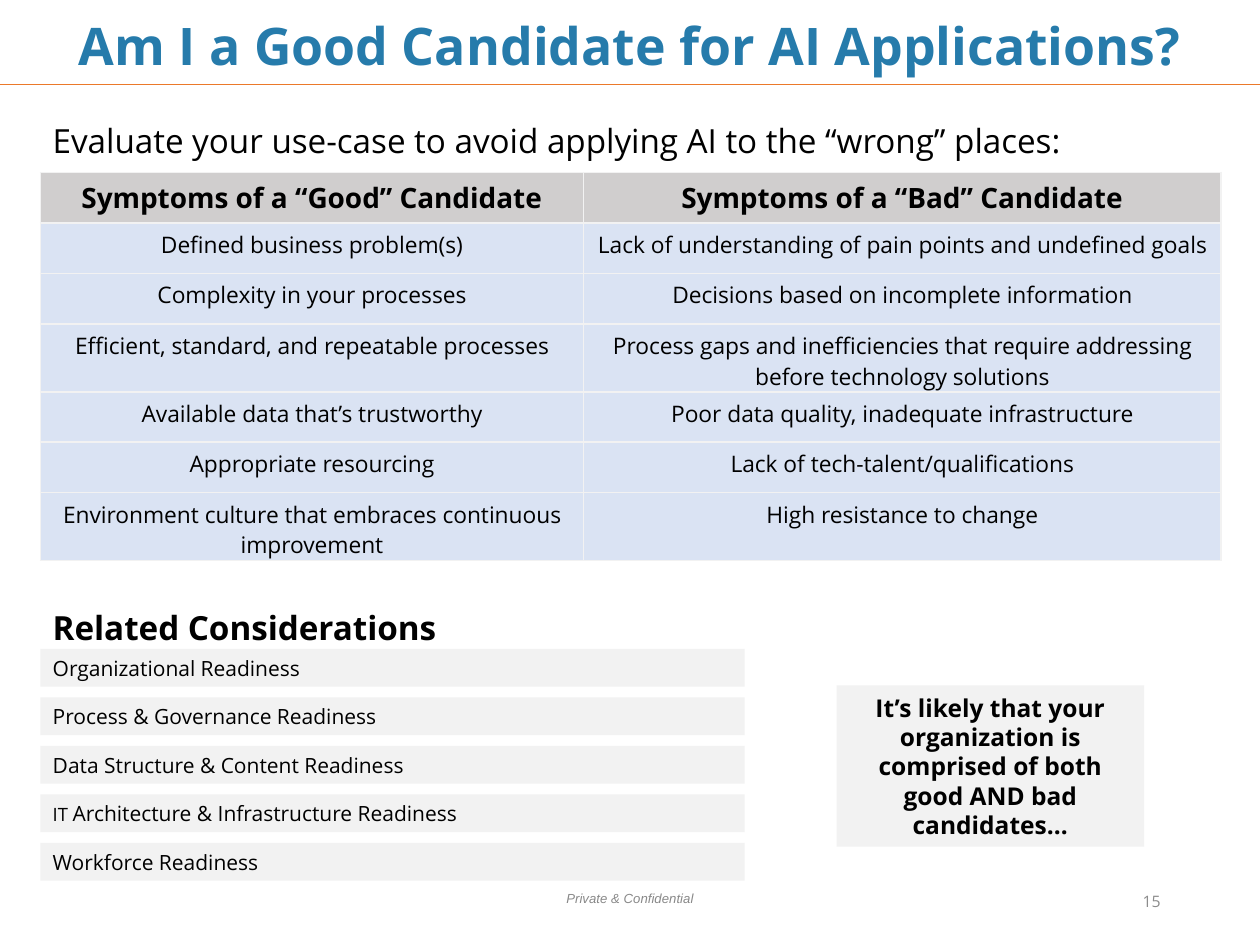
from dataclasses import dataclass

from lxml.etree import SubElement
from pptx import Presentation
from pptx.dml.color import RGBColor
from pptx.enum.shapes import MSO_CONNECTOR, MSO_SHAPE
from pptx.enum.text import MSO_ANCHOR, PP_ALIGN
from pptx.oxml.ns import qn
from pptx.util import Inches, Pt


@dataclass(frozen=True)
class Theme:
    font: str = "Open Sans"
    footer_font: str = "Arial"
    title_color: str = "267BAB"
    rule_color: str = "EB792A"
    text_color: str = "000000"
    footer_color: str = "898989"
    number_color: str = "8C8C8C"
    header_fill: str = "D0CECE"
    body_fill: str = "DAE3F3"
    panel_fill: str = "F2F2F2"
    border_color: str = "F2F2F2"
    title_size: float = 29.6
    heading_size: float = 19
    header_size: float = 16
    callout_size: float = 14
    body_size: float = 13
    item_size: float = 12
    small_item_size: float = 10.5
    number_size: float = 9
    footer_size: float = 7.5


THEME = Theme()

SYMPTOMS = [
    ("Symptoms of a “Good” Candidate", "Symptoms of a “Bad” Candidate"),
    ("Defined business problem(s)", "Lack of understanding of pain points and undefined goals"),
    ("Complexity in your processes", "Decisions based on incomplete information"),
    ("Efficient, standard, and repeatable processes",
     "Process gaps and inefficiencies that require addressing before technology solutions"),
    ("Available data that’s trustworthy", "Poor data quality, inadequate infrastructure"),
    ("Appropriate resourcing", "Lack of tech-talent/qualifications"),
    ("Environment culture that embraces continuous improvement", "High resistance to change"),
]
WRAPPED_ROWS = (3, 6)

# Each item is a list of (text, size) runs
CONSIDERATIONS = [
    [("Organizational Readiness", THEME.item_size)],
    [("Process & Governance Readiness", THEME.item_size)],
    [("Data Structure & Content Readiness", THEME.item_size)],
    [("IT ", THEME.small_item_size),
     ("Architecture & Infrastructure Readiness", THEME.item_size)],
    [("Workforce Readiness", THEME.item_size)],
]


def style_paragraph(paragraph, size, color=THEME.text_color, bold=False, italic=False,
                    align=PP_ALIGN.LEFT, font=THEME.font):
    paragraph.alignment = align
    paragraph.font.name = font
    if size:
        paragraph.font.size = Pt(size)
    paragraph.font.bold = bold
    paragraph.font.italic = italic
    paragraph.font.color.rgb = RGBColor.from_string(color)


def prepare_frame(shape, anchor=MSO_ANCHOR.TOP, inset=0.05):
    frame = shape.text_frame
    frame.word_wrap = True
    frame.vertical_anchor = anchor
    frame.margin_left = frame.margin_right = Inches(0.1)
    frame.margin_top = frame.margin_bottom = Inches(inset)
    return frame.paragraphs[0]


def add_text(slide, box, text, size, anchor=MSO_ANCHOR.TOP, inset=0.05, **style):
    shape = slide.shapes.add_textbox(*map(Inches, box))
    paragraph = prepare_frame(shape, anchor, inset)
    paragraph.text = text
    style_paragraph(paragraph, size, **style)
    return paragraph


def add_panel(slide, box):
    shape = slide.shapes.add_shape(MSO_SHAPE.RECTANGLE, *map(Inches, box))
    shape.shadow.inherit = False
    shape.fill.solid()
    shape.fill.fore_color.rgb = RGBColor.from_string(THEME.panel_fill)
    shape.line.fill.background()
    return prepare_frame(shape, MSO_ANCHOR.MIDDLE, 0.03)


def add_title(slide, box, rule_top):
    paragraph = add_text(slide, box, "Am I a Good Candidate for AI Applications?",
                         THEME.title_size, MSO_ANCHOR.MIDDLE, color=THEME.title_color,
                         bold=True, align=PP_ALIGN.CENTER)
    paragraph.line_spacing = 0.9
    rule = slide.shapes.add_connector(MSO_CONNECTOR.STRAIGHT, 0, Inches(rule_top),
                                      Inches(10), Inches(rule_top))
    rule.line.color.rgb = RGBColor.from_string(THEME.rule_color)
    rule.line.width = Pt(1)
    SubElement(rule._element.spPr, qn("a:effectLst"))


def add_cell_borders(cell):
    properties = cell._tc.get_or_add_tcPr()
    for index, side in enumerate(("a:lnL", "a:lnR", "a:lnT", "a:lnB")):
        line = properties.makeelement(qn(side), {"w": str(Pt(1))})
        fill = SubElement(line, qn("a:solidFill"))
        SubElement(fill, qn("a:srgbClr"), val=THEME.border_color)
        properties.insert(index, line)


def add_symptom_table(slide, box, column_widths, row_height, wrapped_height):
    table = slide.shapes.add_table(len(SYMPTOMS), len(column_widths),
                                   *map(Inches, box)).table
    for column, width in zip(table.columns, column_widths):
        column.width = Inches(width)
    for row_index, texts in enumerate(SYMPTOMS):
        table.rows[row_index].height = Inches(
            wrapped_height if row_index in WRAPPED_ROWS else row_height)
        header = row_index == 0
        for column_index, text in enumerate(texts):
            cell = table.cell(row_index, column_index)
            cell.margin_left = cell.margin_right = Inches(0.1)
            cell.margin_top = cell.margin_bottom = Inches(0.05)
            cell.fill.solid()
            cell.fill.fore_color.rgb = RGBColor.from_string(
                THEME.header_fill if header else THEME.body_fill)
            add_cell_borders(cell)
            paragraph = cell.text_frame.paragraphs[0]
            paragraph.text = text
            style_paragraph(paragraph, THEME.header_size if header else THEME.body_size,
                            bold=header, align=PP_ALIGN.CENTER)


def add_considerations(slide, box, item_height):
    left, top, width, height = box
    add_text(slide, (left, top, 5.16, 0.42), "Related Considerations",
             THEME.heading_size, inset=0.04, bold=True)
    first_top = top + 0.37
    pitch = (top + height - item_height - first_top) / (len(CONSIDERATIONS) - 1)
    for index, runs in enumerate(CONSIDERATIONS):
        paragraph = add_panel(slide, (left, first_top + index * pitch, width, item_height))
        for text, size in runs:
            run = paragraph.add_run()
            run.text = text
            run.font.size = Pt(size)
        style_paragraph(paragraph, None)


def add_callout(slide, box):
    paragraph = add_panel(slide, box)
    paragraph.text = ("It’s likely that your organization is comprised of both "
                      "good AND bad candidates…")
    style_paragraph(paragraph, THEME.callout_size, bold=True, align=PP_ALIGN.CENTER)


def add_footer(slide, note_box, number_box):
    add_text(slide, note_box, "Private & Confidential", THEME.footer_size,
             color=THEME.footer_color, italic=True, align=PP_ALIGN.CENTER,
             font=THEME.footer_font)
    add_text(slide, number_box, "15", THEME.number_size, MSO_ANCHOR.MIDDLE,
             color=THEME.number_color, align=PP_ALIGN.RIGHT)


def main():
    presentation = Presentation()
    presentation.slide_width, presentation.slide_height = Inches(10), Inches(7.5)
    slide = presentation.slides.add_slide(presentation.slide_layouts[6])

    # Footer and title
    add_footer(slide, (3.3, 7.02, 3.4, 0.23), (7.06, 6.95, 2.25, 0.4))
    add_title(slide, (0.32, 0.04, 9.37, 0.7), 0.67)

    # Introduction and comparison table
    introduction = add_text(
        slide, (0.32, 0.75, 9.56, 3.22),
        "Evaluate your use-case to avoid applying AI to the “wrong” places:",
        THEME.heading_size)
    introduction.line_spacing = 1.5
    add_symptom_table(slide, (0.32, 1.37, 9.37, 3.09), (4.31, 5.06), 0.4, 0.54)

    # Considerations and closing remark
    add_considerations(slide, (0.32, 4.78, 5.59, 2.21), 0.3)
    add_callout(slide, (6.64, 5.44, 2.44, 1.28))

    presentation.save("out.pptx")


if __name__ == "__main__":
    main()
